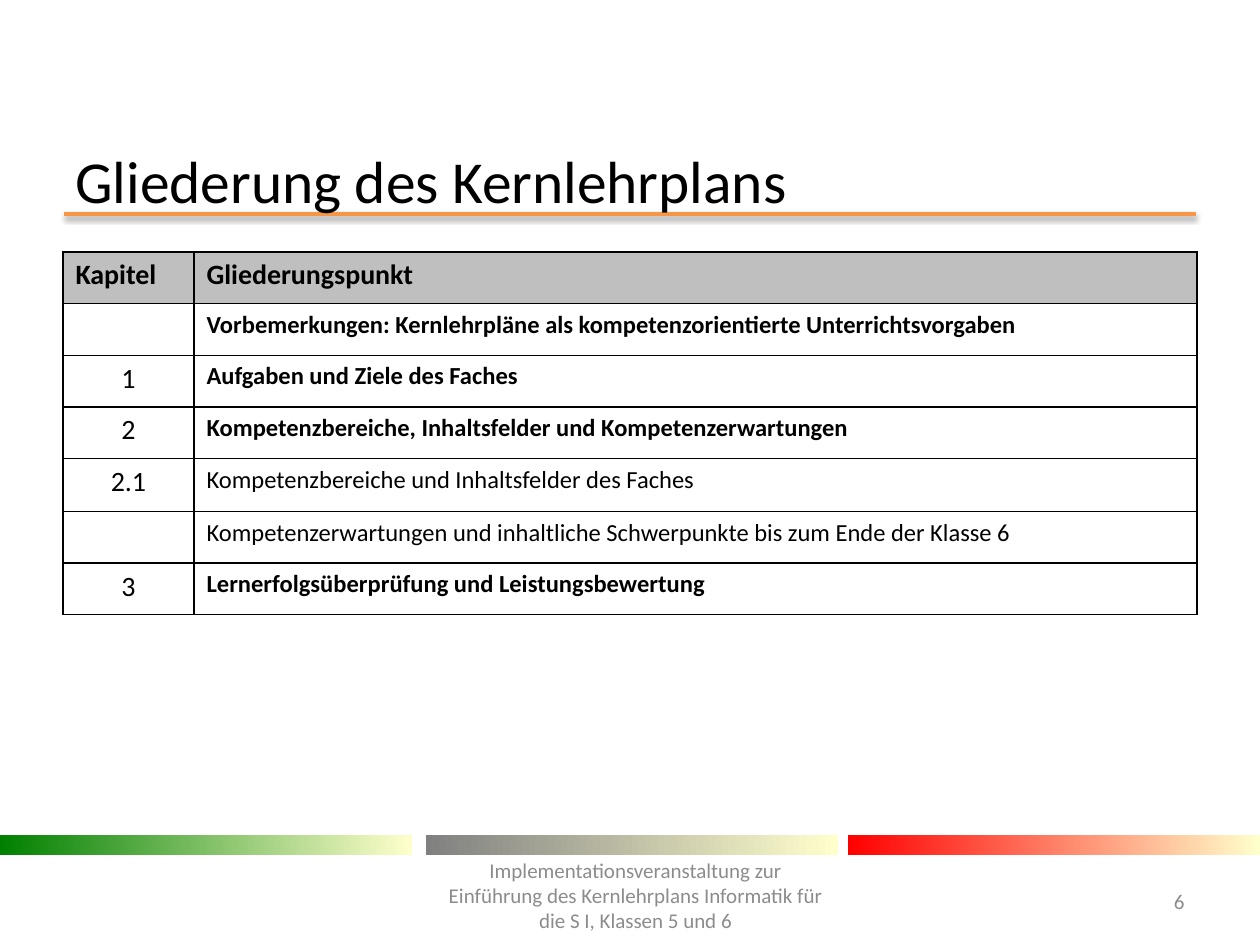
from lxml import etree
from pptx import Presentation, util as u
from pptx.dml.color import RGBColor
from pptx.enum import shapes, text
from pptx.oxml import parse_xml
from pptx.oxml.ns import nsdecls, qn

hue = RGBColor.from_string
COLS, ROWS = 100, 75
deck = Presentation()
deck.slide_width, deck.slide_height = u.Inches(10), u.Inches(7.5)
unit = deck.slide_width / COLS
page = deck.slides.add_slide(deck.slide_layouts[6])
left, mid, right = text.PP_ALIGN.LEFT, text.PP_ALIGN.CENTER, text.PP_ALIGN.RIGHT


def grid(*spots):
    return [u.Emu(round(spot * unit)) for spot in spots]


def write(frame, words, side, tone, form):
    part = frame.paragraphs[0]
    part.alignment = side
    run = part.add_run()
    run.text = words
    run.font.color.rgb = hue(tone)
    for key, value in {"name": "Calibri", **form}.items():
        setattr(run.font, key, value)


rule = page.shapes.add_connector(shapes.MSO_CONNECTOR.STRAIGHT, *grid(5.1, 17, 94.9, 17))
rule.line.color.rgb = hue("F79646")
rule.line.width = u.Pt(2)
rule._element.spPr.append(parse_xml(
    f'<a:effectLst {nsdecls("a")}><a:outerShdw blurRad="{u.Pt(3.1)}" dist="{u.Pt(1.6)}" '
    'dir="5400000" rotWithShape="0"><a:srgbClr val="000000"><a:alpha val="38000"/>'
    '</a:srgbClr></a:outerShdw></a:effectLst>'))

for x, tone in (0, "008000"), (33.8, "808080"), (67.3, "FF0000"):
    bar = page.shapes.add_shape(shapes.MSO_SHAPE.RECTANGLE, *grid(x, 66.3, 32.7, 1.6))
    bar.shadow.inherit = False
    bar.line.fill.background()
    bar.fill.gradient()
    bar.fill.gradient_angle = 0
    for stop, shade in zip(bar.fill.gradient_stops, (tone, "FFFFCC")):
        stop.color.rgb = hue(shade)

notes = [
    ((5, 12.3, 90, 3.9), "Gliederung des Kernlehrplans", left, "000000", 34),
    ((88.6, 69.5, 6.4, 4), "6", right, "8C8C8C", 12),
    ((34.3, 68.2, 32.3, 5.7),
     "Implementationsveranstaltung zur Einführung des Kernlehrplans Informatik "
     "für die S I, Klassen 5 und 6", mid, "8C8C8C", 12),
]
for spot, words, side, tone, size in notes:
    frame = page.shapes.add_textbox(*grid(*spot)).text_frame
    frame.word_wrap = True
    frame.vertical_anchor = text.MSO_ANCHOR.MIDDLE
    write(frame, words, side, tone, {"size": u.Pt(size)})

items = [
    ("Kapitel", "Gliederungspunkt", True),
    ("", "Vorbemerkungen: Kernlehrpläne als kompetenzorientierte Unterrichtsvorgaben", True),
    ("1", "Aufgaben und Ziele des Faches", True),
    ("2", "Kompetenzbereiche, Inhaltsfelder und Kompetenzerwartungen", True),
    ("2.1", "Kompetenzbereiche und Inhaltsfelder des Faches", False),
    ("", "Kompetenzerwartungen und inhaltliche Schwerpunkte bis zum Ende der Klasse 6", False),
    ("3", "Lernerfolgsüberprüfung und Leistungsbewertung", True),
]
table = page.shapes.add_table(len(items), 2, *grid(5, 20, 90, 28.6)).table
for col, wide in zip(table.columns, grid(10.4, 79.6)):
    col.width = wide
for i, (mark, topic, bold) in enumerate(items):
    head = i == 0
    table.rows[i].height = grid(4.2 if i == 4 else 4.1)[0]
    for j, words in enumerate((mark, topic)):
        cell = table.cell(i, j)
        props = cell._tc.get_or_add_tcPr()
        for edge in "LRTB":
            line = etree.SubElement(props, qn(f"a:ln{edge}"), w=str(u.Pt(1)))
            fill = etree.SubElement(line, qn("a:solidFill"))
            etree.SubElement(fill, qn("a:srgbClr"), val="000000")
        if head:
            cell.fill.solid()
            cell.fill.fore_color.rgb = hue("BFBFBF")
        else:
            cell.fill.background()
        if words:
            write(cell.text_frame, words, left if head or j else mid, "000000",
                  {"size": u.Pt(16 if head or j == 0 else 14),
                   "bold": head or (j == 1 and bold)})

deck.save("out.pptx")
